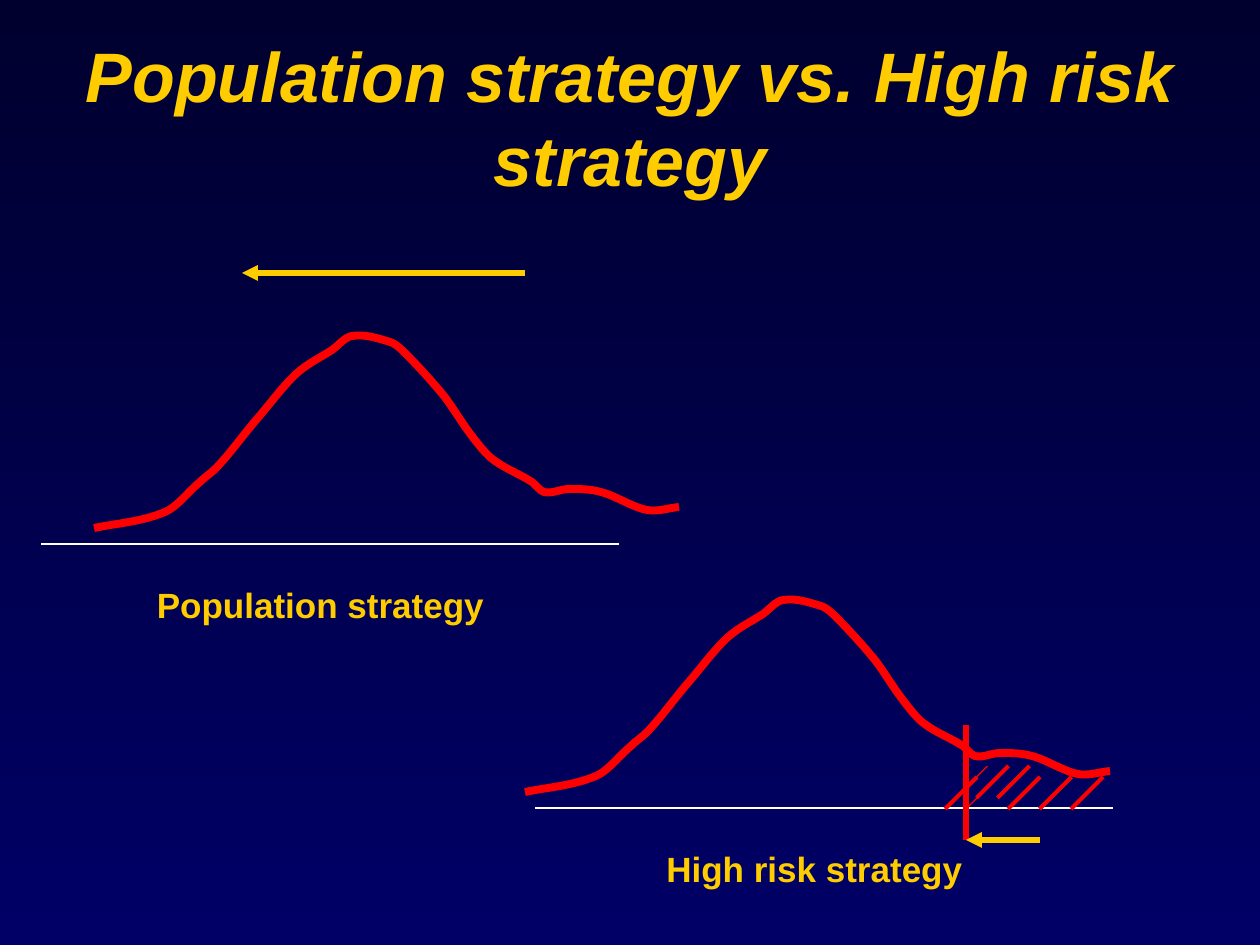
from lxml.etree import SubElement
from pptx import Presentation
from pptx.dml.color import RGBColor
from pptx.enum.shapes import MSO_CONNECTOR
from pptx.enum.text import MSO_ANCHOR, PP_ALIGN
from pptx.oxml.ns import qn
from pptx.util import Pt

PX = 914400 / 126
NIGHT = RGBColor(0x00, 0x00, 0x2F)
NAVY = RGBColor(0x00, 0x00, 0x66)
GOLD = RGBColor(0xFF, 0xCC, 0x00)
RED = RGBColor(0xFF, 0x00, 0x00)
WHITE = RGBColor(0xFF, 0xFF, 0xFF)

HAIRLINE, HATCH_LINE, BOLD_LINE, CURVE_LINE = 0.75, 2.25, 3, 4.5

RISE = [(0, 192), (71, 176), (106, 146), (125, 129), (163, 83), (202, 38), (238, 14)]
PEAK = [(258, 0), (296, 6), (309, 15)]
FALL = [(350, 60), (372, 92), (397, 122), (438, 146)]
TAIL = [(450, 156), (475, 153), (507, 156), (553, 174), (585, 171)]
RISK_CURVE = RISE + PEAK + FALL + TAIL

CURVE_RISE = 208
CAPTION_INDENT, CAPTION_DROP = 64, 33
CAPTION_W, CAPTION_H = 431, 54

CUTOFF_X, CUTOFF_TOP, CUTOFF_BOTTOM = 966, 725, 840
HATCH_LEFT, HATCH_PITCH, HATCH_SIZE = 977, 10.5, 32
HATCH_ROWS = {766: (1, 3, 5), 777: (0, 2, 6, 9, 12)}
THIN_STEPS = (1, 2)


def emu(*lengths):
    return [round(length * PX) for length in lengths]


def write(tf, text, size=20, color=GOLD, font="Arial", bold=True, italic=False,
          align=PP_ALIGN.CENTER, anchor=MSO_ANCHOR.TOP):
    tf.word_wrap = True
    tf.vertical_anchor = anchor
    p = tf.paragraphs[0]
    p.alignment = align
    r = p.add_run()
    r.text = text
    r.font.name, r.font.size = font, Pt(size)
    r.font.bold, r.font.italic = bold, italic
    r.font.color.rgb = color


def smooth(points):
    before = points[:1] + points[:-1]
    after = points[1:] + points[-1:]
    slopes = [(y2 - y1) / (x2 - x1) for (x1, y1), (x2, y2) in zip(before, after)]
    knots = list(zip(points, slopes))
    beziers = []
    for ((x1, y1), slope1), ((x2, y2), slope2) in zip(knots, knots[1:]):
        reach = (x2 - x1) / 3
        beziers += [(x1 + reach, y1 + reach * slope1),
                    (x2 - reach, y2 - reach * slope2),
                    (x2, y2)]
    return beziers


class Deck:
    def __init__(self, width, height):
        self.prs = Presentation()
        self.prs.slide_width, self.prs.slide_height = emu(width, height)
        self.s = self.prs.slides.add_slide(self.prs.slide_layouts[6])

    def background(self, top, bottom):
        fill = self.s.background.fill
        fill.gradient()
        fill.gradient_angle = 270
        for stop, color, position in zip(fill.gradient_stops, (top, bottom), (0, 1)):
            stop.color.rgb = color
            stop.position = position

    def text(self, x, y, w, h, text, **style):
        sp = self.s.shapes.add_textbox(*emu(x, y, w, h))
        write(sp.text_frame, text, **style)

    def line(self, x1, y1, x2, y2, color, width, arrow=False):
        sp = self.s.shapes.add_connector(MSO_CONNECTOR.STRAIGHT, *emu(x1, y1, x2, y2))
        sp.line.color.rgb = color
        sp.line.width = Pt(width)
        if arrow:
            SubElement(sp.line._get_or_add_ln(), qn("a:tailEnd"), type="triangle")
        SubElement(sp._element.spPr, qn("a:effectLst"))

    def arrow_left(self, tail_x, head_x, y):
        self.line(tail_x, y, head_x, y, GOLD, BOLD_LINE, arrow=True)

    def curve(self, x, y, points, color, width):
        builder = self.s.shapes.build_freeform(*points[0], scale=PX)
        builder.add_line_segments(smooth(points), close=False)
        sp = builder.convert_to_shape(*emu(x, y))
        sp.shadow.inherit = False
        sp.fill.background()
        sp.line.color.rgb = color
        sp.line.width = Pt(width)
        outline = next(sp._element.iter(qn("a:path")))
        segments = outline.findall(qn("a:lnTo"))
        for i in range(0, len(segments), 3):
            bezier = SubElement(outline, qn("a:cubicBezTo"))
            for segment in segments[i:i + 3]:
                bezier.append(segment[0])
                outline.remove(segment)

    def distribution(self, axis_left, axis_right, axis_y, curve_x, caption):
        self.line(axis_left, axis_y, axis_right, axis_y, WHITE, HAIRLINE)
        self.curve(curve_x, axis_y - CURVE_RISE, RISK_CURVE, RED, CURVE_LINE)
        self.text(axis_left + CAPTION_INDENT, axis_y + CAPTION_DROP,
                  CAPTION_W, CAPTION_H, caption)

    def hatching(self):
        for y, steps in HATCH_ROWS.items():
            for step in steps:
                x = HATCH_LEFT + step * HATCH_PITCH
                width = HAIRLINE if step in THIN_STEPS else HATCH_LINE
                self.line(x, y, x - HATCH_SIZE, y + HATCH_SIZE, RED, width)


def main():
    deck = Deck(1260, 945)
    deck.background(NIGHT, NAVY)
    deck.text(63, 37, 1134, 158, "Population strategy vs. High risk strategy",
              size=40, italic=True, anchor=MSO_ANCHOR.MIDDLE)

    deck.distribution(41, 619, 544, 94, "Population strategy")
    deck.arrow_left(525, 242, 273)

    deck.distribution(535, 1113, 808, 525, "High risk strategy")
    deck.line(CUTOFF_X, CUTOFF_TOP, CUTOFF_X, CUTOFF_BOTTOM, RED, BOLD_LINE)
    deck.hatching()
    deck.arrow_left(1040, CUTOFF_X, CUTOFF_BOTTOM)
    deck.prs.save("out.pptx")


if __name__ == "__main__":
    main()
